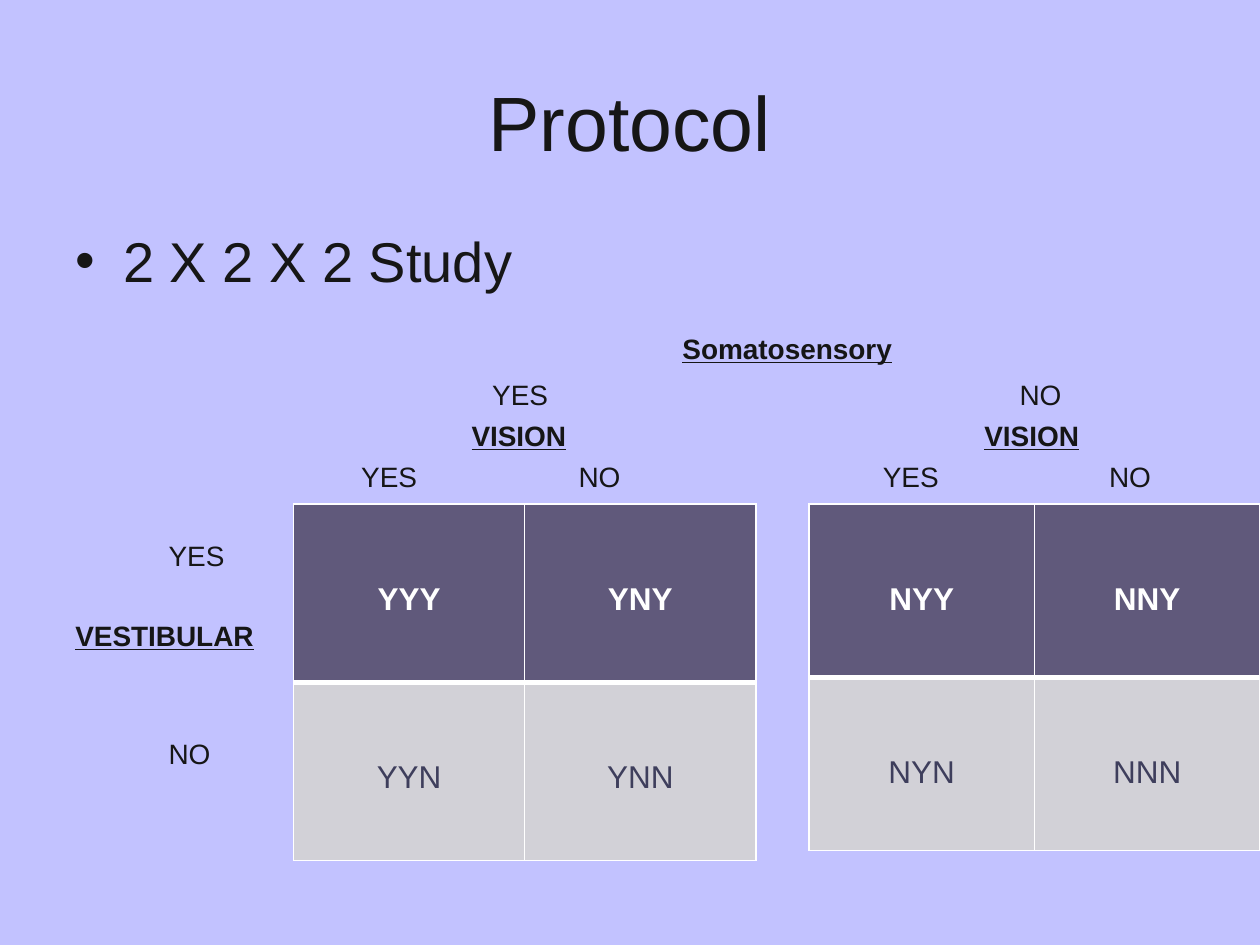
import pptx
import pptx.dml.color
import pptx.enum.text
import pptx.oxml
import pptx.oxml.ns
import pptx.util

Inches = pptx.util.Inches
Pt = pptx.util.Pt
ALIGN = pptx.enum.text.PP_ALIGN
ANCHOR = pptx.enum.text.MSO_ANCHOR
COLORS = {"background": "C2C2FF", "ink": "161616", "white": "FFFFFF",
          "header": "60597B", "body": "D2D1D7", "muted": "3E3E5C"}


class ProtocolSlide:
    """Hold the font, the colours and the slide being built."""

    def __init__(self, presentation, font="Arial"):
        self.font = font
        self.slide = presentation.slides.add_slide(presentation.slide_layouts[6])
        self.paint(self.slide.background.fill, "background")

    def paint(self, fill, color):
        fill.solid()
        fill.fore_color.rgb = pptx.dml.color.RGBColor.from_string(COLORS[color])

    def run(self, paragraph, text, size, color="ink", **formats):
        run = paragraph.add_run()
        run.text = text
        for name, value in {"name": self.font, "size": Pt(size), **formats}.items():
            setattr(run.font, name, value)
        self.paint(run.font.fill, color)

    def box(self, left, top, width, height, anchor=ANCHOR.TOP):
        frame = self.slide.shapes.add_textbox(
            Inches(left), Inches(top), Inches(width), Inches(height)).text_frame
        for name, value in {"word_wrap": True, "vertical_anchor": anchor}.items():
            setattr(frame, name, value)
        return frame

    def element(self, parent, tag, **attributes):
        child = pptx.oxml.parse_xml(f"<a:{tag} {pptx.oxml.ns.nsdecls('a')}/>")
        for name, value in attributes.items():
            child.set(name, str(value))
        parent.append(child)
        return child

    def bullet(self, paragraph, text, size, space):
        paragraph.space_before = Pt(space)
        self.run(paragraph, text, size)
        properties = paragraph._p.get_or_add_pPr()
        properties.set("marL", str(Inches(0.38)))
        properties.set("indent", str(-Inches(0.38)))
        self.element(properties, "buFont", typeface=self.font)
        self.element(properties, "buChar", char="•")

    def label_line(self, frame, space, labels, heading=False, tab_align="ctr"):
        paragraph = frame.add_paragraph()
        paragraph.space_before = Pt(space)
        stops = [position for position, _ in labels if position]
        if stops:
            tabs = self.element(paragraph._p.get_or_add_pPr(), "tabLst")
            for position in stops:
                self.element(tabs, "tab", pos=Inches(position), algn=tab_align)
        for position, label in labels:
            if position:
                self.run(paragraph, "\t", 16)
            self.run(paragraph, label, 16, bold=heading, underline=heading)

    def border(self, cell, side, width):
        line = self.element(cell._tc.get_or_add_tcPr(), side, w=Pt(width))
        fill = self.element(line, "solidFill")
        self.element(fill, "srgbClr", val=COLORS["white"])

    def condition_table(self, left, top, width, height, rows):
        table = self.slide.shapes.add_table(
            2, 2, Inches(left), Inches(top), Inches(width), Inches(height)).table
        table.horz_banding = False
        for row, codes in enumerate(rows):
            is_header = row == 0
            for column, code in enumerate(codes):
                cell = table.cell(row, column)
                cell.margin_top = Inches(0.62)
                paragraph = cell.text_frame.paragraphs[0]
                paragraph.alignment = ALIGN.CENTER
                self.run(paragraph, code, 18, "white" if is_header else "muted",
                         bold=is_header)
                widths = {"lnL": 1, "lnR": 1, "lnT": 1 if is_header else 3,
                          "lnB": 3 if is_header else 1}
                for side, line_width in widths.items():
                    self.border(cell, side, line_width)
                self.paint(cell.fill, "header" if is_header else "body")


def main():
    presentation = pptx.Presentation()
    presentation.slide_width, presentation.slide_height = Inches(10), Inches(7.5)
    protocol = ProtocolSlide(presentation)

    title = protocol.box(0.5, 0.33, 9, 1.25, ANCHOR.MIDDLE).paragraphs[0]
    title.alignment = ALIGN.CENTER
    protocol.run(title, "Protocol", 44)

    study = protocol.box(0.5, 1.75, 9, 4.95)
    protocol.bullet(study.paragraphs[0], "2 X 2 X 2 Study", 32, 4)
    protocol.label_line(study, 21.5, [(5.65, "Somatosensory")], heading=True)
    protocol.label_line(study, 7.3, [(3.53, "YES"), (7.66, "NO")])
    protocol.label_line(study, 4, [(3.52, "VISION"), (7.59, "VISION")], heading=True)
    protocol.label_line(study, 4, [(2.49, "YES"), (4.16, "NO"),
                                   (6.63, "YES"), (8.37, "NO")])
    protocol.label_line(study, 26.3, [(0.74, "YES")], tab_align="l")
    protocol.label_line(study, 26.3, [(0, "VESTIBULAR")], heading=True)
    protocol.label_line(study, 48.5, [(0.74, "NO")], tab_align="l")

    protocol.condition_table(2.33, 4, 3.67, 2.83, [("YYY", "YNY"), ("YYN", "YNN")])
    protocol.condition_table(6.42, 4, 3.58, 2.75, [("NYY", "NNY"), ("NYN", "NNN")])
    presentation.save("out.pptx")


if __name__ == "__main__":
    main()
